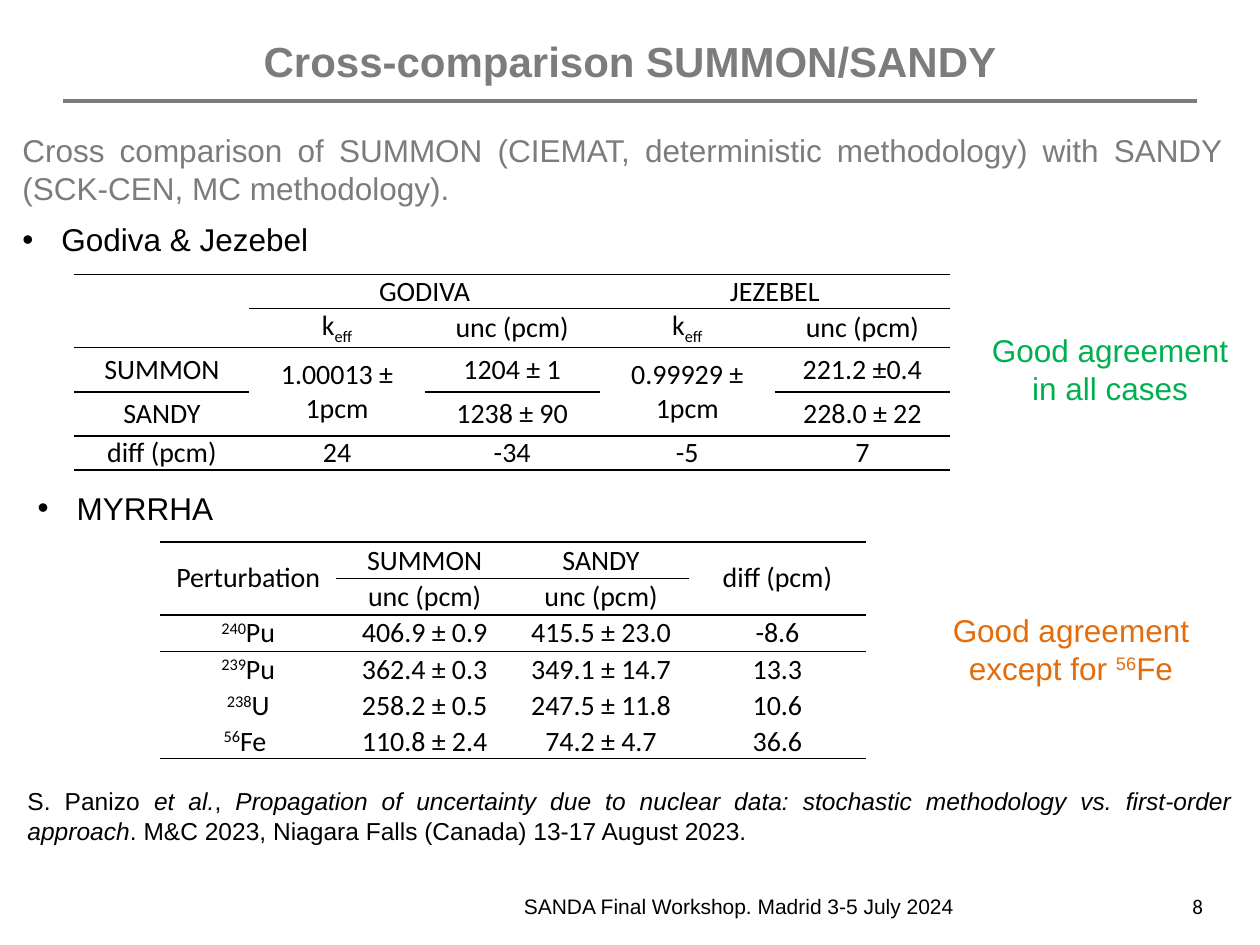
import pptx
import pptx.util
import pptx.dml.color
import pptx.enum.shapes
import pptx.enum.text
import pptx.oxml.ns
from lxml import etree

Inches, Pt = pptx.util.Inches, pptx.util.Pt
Align, Anchor = pptx.enum.text.PP_ALIGN, pptx.enum.text.MSO_ANCHOR
qn = pptx.oxml.ns.qn

COLORS = {"gray": "7C7C7D", "black": "000000", "green": "00B050", "orange": "E46C0A"}
PLAIN = "{2D5ABB26-0587-4C30-8999-92F81FD0307C}"
SUP, SUB, ITAL = {"base": 30}, {"base": -25}, {"ital": True}

TITLE = "Cross-comparison SUMMON/SANDY"
KEFF = ["k", ("eff", SUB)]

BOXES = [
    dict(at=(0.08, 0.99, 9.72, 0.71), color="gray", align=Align.JUSTIFY, paras=[[
        "Cross comparison of SUMMON (CIEMAT, deterministic methodology) with SANDY "
        "(SCK-CEN, MC methodology)."]]),
    dict(at=(0.08, 1.7, 5, 0.4), align=Align.JUSTIFY, bullet=True, paras=[["Godiva & Jezebel"]]),
    dict(at=(0.2, 3.83, 1.69, 0.4), align=Align.JUSTIFY, bullet=True, paras=[["MYRRHA"]]),
    dict(at=(0.12, 6.19, 9.76, 0.57), size=14, align=Align.JUSTIFY, paras=[[
        "S. Panizo ", ("et al.", ITAL), ", ",
        ("Propagation of uncertainty due to nuclear data: stochastic methodology "
         "vs. first-order approach", ITAL),
        ". M&C 2023, Niagara Falls (Canada) 13-17 August 2023."]]),
    dict(at=(7.74, 2.58, 2.14, 0.71), color="green",
         paras=[["Good agreement"], ["in all cases"]]),
    dict(at=(7.22, 4.8, 2.56, 0.71), color="orange",
         paras=[["Good agreement except for ", ("56", SUP), "Fe"]]),
    dict(at=(3.66, 7.04, 4.41, 0.3), size=12,
         paras=[["SANDA Final Workshop. Madrid 3-5 July 2024"]]),
    dict(at=(9.2, 7.04, 0.61, 0.3), size=12, face="Calibri", paras=[["8"]]),
]

TABLES = [
    dict(at=(0.59, 2.18), width=1.39, heights=[0.27, 0.31, 0.35, 0.35, 0.27],
         cells=[
             ["", "GODIVA", "", "JEZEBEL", ""],
             ["", KEFF, "unc (pcm)", KEFF, "unc (pcm)"],
             ["SUMMON", "1.00013 ± 1pcm", "1204 ± 1", "0.99929 ± 1pcm", "221.2 ±0.4"],
             ["SANDY", "", "1238 ± 90", "", "228.0 ± 22"],
             ["diff (pcm)", "24", "-34", "-5", "7"]],
         spans=[(0, 1, 0, 2), (0, 3, 0, 4), (2, 1, 3, 1), (2, 3, 3, 3)],
         rules={0: range(5), 1: range(1, 5), 2: range(5), 4: range(5), 5: range(5)},
         low=[]),
    dict(at=(1.27, 4.3), width=1.4, heights=[0.29] * 5 + [0.27],
         cells=[
             ["Perturbation", "SUMMON", "SANDY", "diff (pcm)"],
             ["", "unc (pcm)", "unc (pcm)", ""],
             [[("240", SUP), "Pu"], "406.9 ± 0.9", "415.5 ± 23.0", "-8.6"],
             [[("239", SUP), "Pu"], "362.4 ± 0.3", "349.1 ± 14.7", "13.3"],
             [[("238", SUP), "U"], "258.2 ± 0.5", "247.5 ± 11.8", "10.6"],
             [[("56", SUP), "Fe "], "110.8 ± 2.4", "74.2 ± 4.7", "36.6"]],
         spans=[(0, 0, 1, 0), (0, 3, 1, 3)],
         rules={0: range(4), 1: range(1, 3), 2: range(4), 6: range(4)},
         low=[(0, 1), (0, 2)]),
]


def write(para, runs, size, face, color, align=Align.CENTER):
    para.alignment = align
    for item in runs:
        text, look = (item, {}) if isinstance(item, str) else item
        run = para.add_run()
        run.text = text
        font = run.font
        font.size, font.name = Pt(size), face
        font.color.rgb = pptx.dml.color.RGBColor.from_string(COLORS[color])
        if "ital" in look:
            font.italic = True
        if "base" in look:
            run._r.get_or_add_rPr().set("baseline", str(look["base"] * 1000))


def add_box(slide, at, paras, size=18, face="Arial", color="black",
            align=Align.CENTER, bullet=False):
    frame = slide.shapes.add_textbox(*map(Inches, at)).text_frame
    frame.word_wrap = True
    for i, runs in enumerate(paras):
        para = frame.add_paragraph() if i else frame.paragraphs[0]
        if bullet:
            props = para._p.get_or_add_pPr()
            props.set("marL", str(Inches(0.31)))
            props.set("indent", str(Inches(-0.31)))
            etree.SubElement(props, qn("a:buFont")).set("typeface", "Arial")
            etree.SubElement(props, qn("a:buChar")).set("char", "•")
        write(para, runs, size, face, color, align)


def add_rule(cell, tag):
    line = etree.SubElement(cell._tc.get_or_add_tcPr(), qn(tag), w=str(Pt(1)))
    fill = etree.SubElement(line, qn("a:solidFill"))
    etree.SubElement(fill, qn("a:srgbClr"), val=COLORS["black"])


def add_grid(slide, at, width, heights, cells, spans, rules, low):
    cols = len(cells[0])
    grid = slide.shapes.add_table(
        len(cells), cols, *map(Inches, at), Inches(width * cols), Inches(sum(heights))).table
    grid._tbl.tblPr.find(qn("a:tableStyleId")).text = PLAIN
    grid.first_row = grid.horz_banding = False
    for col in grid.columns:
        col.width = Inches(width)
    for r, row in enumerate(cells):
        grid.rows[r].height = Inches(heights[r])
        for c, value in enumerate(row):
            cell = grid.cell(r, c)
            cell.margin_left = cell.margin_right = Inches(0.05)
            cell.margin_top = cell.margin_bottom = 0
            cell.vertical_anchor = Anchor.BOTTOM if (r, c) in low else Anchor.MIDDLE
            for tag, edge in (("a:lnT", r), ("a:lnB", r + 1)):
                if c in rules.get(edge, ()):
                    add_rule(cell, tag)
            cell.fill.background()
            para = cell.text_frame.paragraphs[0]
            if value:
                write(para, [value] if isinstance(value, str) else value, 16, "Calibri", "black")
            else:
                etree.SubElement(para._p, qn("a:endParaRPr"), sz="1200")
    for top, left, end, right in spans:
        grid.cell(top, left).merge(grid.cell(end, right))


def add_head(slide):
    title = slide.shapes.title
    title.left, title.top, title.width, title.height = map(Inches, (0.5, 0.29, 9, 0.38))
    title.text_frame.vertical_anchor = Anchor.MIDDLE
    para = title.text_frame.paragraphs[0]
    write(para, [TITLE], 24, "Arial", "gray")
    para.runs[0].font.bold = True
    line = slide.shapes.add_connector(
        pptx.enum.shapes.MSO_CONNECTOR.STRAIGHT, *map(Inches, (0.5, 0.8, 9.5, 0.8)))
    line.line.width = Pt(2)
    line.line.color.rgb = pptx.dml.color.RGBColor.from_string(COLORS["gray"])
    etree.SubElement(line._element.spPr, qn("a:effectLst"))


def main():
    """Build the cross-comparison slide."""
    deck = pptx.Presentation()
    deck.slide_width, deck.slide_height = Inches(10), Inches(7.5)
    slide = deck.slides.add_slide(deck.slide_layouts[5])
    add_head(slide)
    for box in BOXES:
        add_box(slide, **box)
    for grid in TABLES:
        add_grid(slide, **grid)
    deck.save("out.pptx")


if __name__ == "__main__":
    main()
